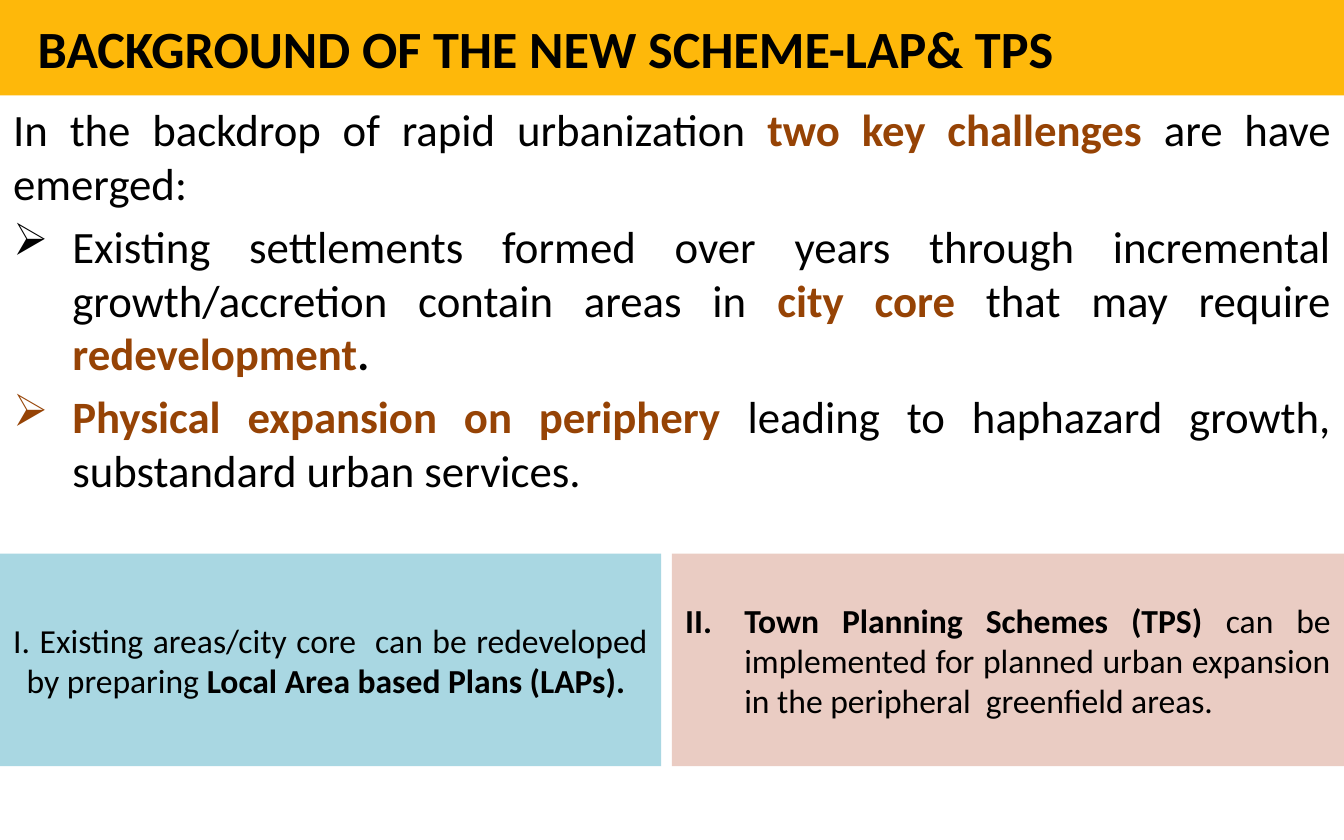
from dataclasses import dataclass

from lxml import etree
from pptx import Presentation
from pptx.dml.color import RGBColor
from pptx.enum.shapes import MSO_SHAPE
from pptx.enum.text import MSO_ANCHOR, PP_ALIGN
from pptx.oxml.ns import qn
from pptx.util import Inches, Pt

RECTANGLE = MSO_SHAPE.RECTANGLE
MIDDLE, TOP = MSO_ANCHOR.MIDDLE, MSO_ANCHOR.TOP
LEFT, JUSTIFY = PP_ALIGN.LEFT, PP_ALIGN.JUSTIFY


@dataclass(frozen=True)
class Theme:
    font: str = "Calibri"
    text: str = "000000"
    accent: str = "964305"
    title_fill: str = "FEB80A"
    core_fill: str = "A9D7E2"
    periphery_fill: str = "EACCC3"
    title_size: int = 28
    body_size: int = 24
    panel_size: int = 18


THEME = Theme()

# Each run is (text, bold, colour)
def plain(text):
    return text, False, THEME.text


def bold(text):
    return text, True, THEME.text


def accent(text):
    return text, True, THEME.accent


def add_band(slide, left, top, width, height, fill):
    """Add a borderless filled rectangle and return its text frame."""
    shape = slide.shapes.add_shape(
        RECTANGLE, Inches(left), Inches(top), Inches(width), Inches(height))
    shape.shadow.inherit = False
    shape.fill.solid()
    shape.fill.fore_color.rgb = RGBColor.from_string(fill)
    shape.line.fill.background()
    return prepare_frame(shape.text_frame, MIDDLE)


def add_body(slide, left, top, width, height):
    """Add a wrapping text box and return its text frame."""
    shape = slide.shapes.add_textbox(
        Inches(left), Inches(top), Inches(width), Inches(height))
    return prepare_frame(shape.text_frame, TOP)


def prepare_frame(text_frame, anchor):
    text_frame.word_wrap = True
    text_frame.vertical_anchor = anchor
    return text_frame


def write_runs(paragraph, runs, size, alignment=JUSTIFY):
    paragraph.alignment = alignment
    for text, is_bold, colour in runs:
        run = paragraph.add_run()
        run.text = text
        run.font.name = THEME.font
        run.font.size = Pt(size)
        run.font.bold = is_bold
        run.font.color.rgb = RGBColor.from_string(colour)


def set_bullet(paragraph, tag, indent, **attributes):
    """Give the paragraph a hanging indent and a bullet or number."""
    properties = paragraph._p.get_or_add_pPr()
    properties.set("marL", str(Inches(indent)))
    properties.set("indent", str(-Inches(indent)))
    etree.SubElement(properties, qn(tag), attributes)


def add_numbered_panel(slide, left, width, fill, runs, indent, number):
    paragraph = add_band(slide, left, 4.12, width, 1.58, fill).paragraphs[0]
    write_runs(paragraph, runs, THEME.panel_size)
    set_bullet(paragraph, "a:buAutoNum", indent,
               type="romanUcPeriod", startAt=str(number))


def main():
    presentation = Presentation()
    presentation.slide_width = Inches(10)
    presentation.slide_height = Inches(6.25)
    slide = presentation.slides.add_slide(presentation.slide_layouts[6])

    # Title band
    title = add_band(slide, 0, 0, 10, 0.71, THEME.title_fill)
    title.margin_left = Inches(0.28)
    write_runs(title.paragraphs[0],
               [bold("BACKGROUND OF THE NEW SCHEME-LAP& TPS")],
               THEME.title_size, LEFT)

    # Introduction and the two challenges
    challenges = [
        [plain("In the backdrop of rapid urbanization "),
         accent("two key challenges "), plain("are have emerged: ")],
        [plain("Existing settlements formed over years through incremental "
               "growth/accretion contain areas in "),
         accent("city core "), plain("that may require "),
         accent("redevelopment"), bold(".")],
        [accent("Physical expansion on periphery "),
         plain("leading to haphazard growth, substandard urban services.")],
    ]
    body = add_body(slide, 0, 0.71, 10, 3.25)
    for index, runs in enumerate(challenges):
        paragraph = body.add_paragraph() if index else body.paragraphs[0]
        write_runs(paragraph, runs, THEME.body_size)
        if index:
            paragraph.space_before = Pt(4.8)
            set_bullet(paragraph, "a:buChar", 0.44, char="➢")

    # The two responses
    add_numbered_panel(
        slide, 0, 4.92, THEME.core_fill,
        [plain(" Existing areas/city core  can be redeveloped by preparing "),
         bold("Local Area based Plans (LAPs).")], 0.1, 1)
    add_numbered_panel(
        slide, 5, 5, THEME.periphery_fill,
        [bold("Town Planning Schemes (TPS) "),
         plain("can be implemented for planned urban expansion in the "
               "peripheral  greenfield areas. ")], 0.44, 2)

    presentation.save("out.pptx")


if __name__ == "__main__":
    main()
